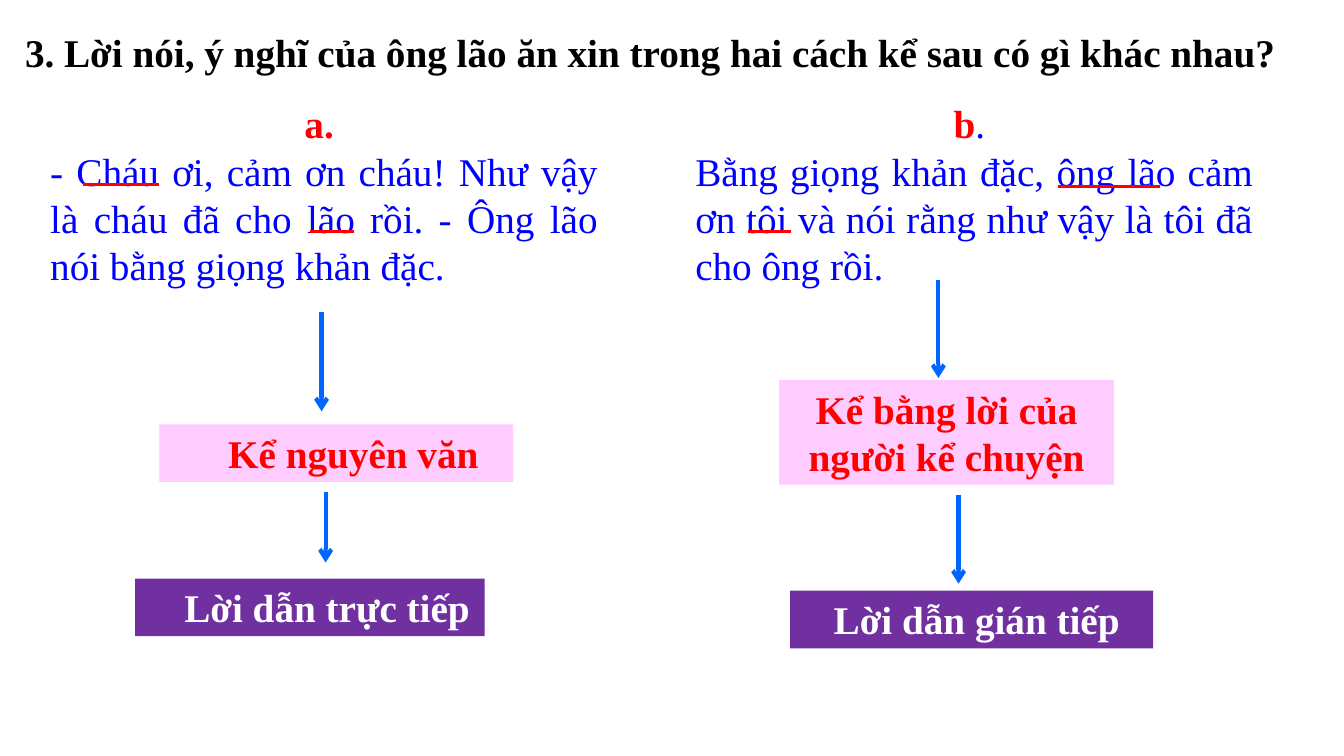
from lxml import etree
from pptx import Presentation
from pptx import util as u
from pptx.dml.color import RGBColor
from pptx.enum import shapes, text
from pptx.oxml.ns import qn

C = {"red": "FF0000", "blue": "0000FF", "arrow": "0066FF", "pink": "FFCCFF",
     "purple": "7030A0", "white": "FFFFFF", "black": "000000"}
FONT, SIZE, INSET = "Times New Roman", 28, 7.2
CENTER, JUSTIFY, LEFT = text.PP_ALIGN.CENTER, text.PP_ALIGN.JUSTIFY, text.PP_ALIGN.LEFT

# Content: a paragraph is (alignment, [(text, colour, bold), ...])
question = [(LEFT, [("3. Lời nói, ý nghĩ của ông lão ăn xin trong hai cách kể sau "
                     "có gì khác nhau?", "black", True)])]
passage_a = [
    (CENTER, [("a. ", "red", True)]),
    (JUSTIFY, [("- Cháu ơi, cảm ơn cháu! Như vậy là cháu đã cho lão rồi. "
                "- Ông lão nói bằng giọng khản đặc.", "blue", False)])]
passage_b = [
    (CENTER, [("b", "red", True), (". ", "blue", False)]),
    (JUSTIFY, [("Bằng giọng khản đặc, ông lão cảm ơn tôi và nói rằng như vậy "
                "là tôi đã cho ông rồi.", "blue", False)])]
verbatim = [(JUSTIFY, [("Kể nguyên văn", "red", True)])]
retold = [(CENTER, [("Kể bằng lời của người kể chuyện", "red", True)])]
direct = [(JUSTIFY, [("Lời dẫn trực tiếp", "white", True)])]
indirect = [(CENTER, [("Lời dẫn gián tiếp", "white", True)])]

# Boxes: left, top, width, height, fill, extra left inset, paragraphs
boxes = [
    (28.8, 67.7, 405.4, 143.3, "white", 0, passage_a),
    (489.6, 67.7, 412.6, 337, "white", 0, passage_b),
    (113.8, 303.1, 252.7, 41.2, "pink", 42, verbatim),
    (556.6, 271.4, 239, 74.9, "pink", 0, retold),
    (96.5, 413.3, 249.8, 41.2, "purple", 28, direct),
    (564.5, 421.9, 259.2, 41.2, "purple", 7, indirect),
    (10.8, 16.6, 917.3, 41.2, None, 0, question),
]
# Underlined words: left, right, y
underlines = [(59, 113.8, 131.8), (221.8, 252.7, 165.6),
              (756, 828.7, 133.2), (534.2, 565.2, 165.6)]
# Downward arrows: x, top, bottom
arrows = [(229.7, 223.2, 293.8), (232.6, 351.4, 401.8),
          (670.3, 200.2, 270), (684.7, 353.5, 416.9)]

prs = Presentation()
prs.slide_width, prs.slide_height = u.Pt(960), u.Pt(540)
s = prs.slides.add_slide(prs.slide_layouts[6])


def rgb(name):
    return RGBColor.from_string(C[name])


def add_box(x, y, w, h, fill, inset, paragraphs):
    area = [u.Pt(v) for v in (x, y, w, h)]
    if fill:
        sp = s.shapes.add_shape(shapes.MSO_SHAPE.RECTANGLE, *area)
        sp.shadow.inherit = False
        sp.fill.solid()
        sp.fill.fore_color.rgb = rgb(fill)
        sp.line.fill.background()
    else:
        sp = s.shapes.add_textbox(*area)
    tf = sp.text_frame
    tf.word_wrap = True
    tf.vertical_anchor = text.MSO_ANCHOR.TOP
    tf.margin_left = u.Pt(INSET + inset)
    for i, (align, runs) in enumerate(paragraphs):
        p = tf.paragraphs[0] if i == 0 else tf.add_paragraph()
        p.alignment = align
        for words, colour, bold in runs:
            r = p.add_run()
            r.text = words
            r.font.name, r.font.size, r.font.bold = FONT, u.Pt(SIZE), bold
            r.font.color.rgb = rgb(colour)


def add_line(x1, y1, x2, y2, colour, width, arrow=False):
    cn = s.shapes.add_connector(shapes.MSO_CONNECTOR.STRAIGHT,
                                *[u.Pt(v) for v in (x1, y1, x2, y2)])
    cn.line.color.rgb = rgb(colour)
    cn.line.width = u.Pt(width)
    if arrow:
        etree.SubElement(cn.line._get_or_add_ln(), qn("a:tailEnd"), type="arrow")
    etree.SubElement(cn._element.spPr, qn("a:effectLst"))


# Passages, labels and question
for box in boxes:
    add_box(*box)

# Red underlines
for left, right, y in underlines:
    add_line(left, y, right, y, "red", 2.25)

# Blue arrows
for x, top, bottom in arrows:
    add_line(x, top, x, bottom, "arrow", 3, arrow=True)

prs.save("out.pptx")
